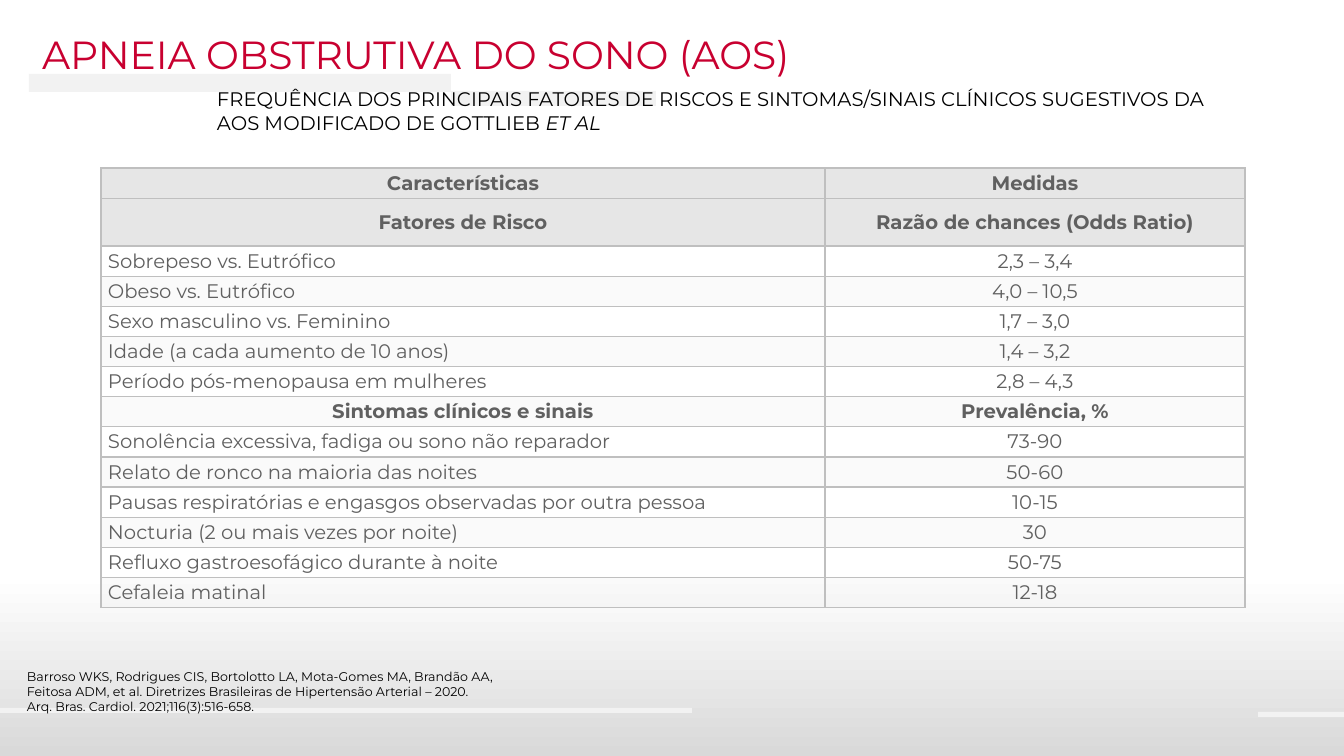
import pptx
import pptx.dml.color
import pptx.enum.shapes
import pptx.enum.text
import pptx.oxml
import pptx.oxml.ns
import pptx.util

W, H = 1344, 756
SCALE = 12192000 / W
FONT = "Montserrat"
COLORS = {
    "red": "C80030", "black": "000000", "text": "606060", "white": "FFFFFF",
    "bar": "F2F2F2", "shade": "D9D9D9", "head": "E6E6E6", "border": "BFBFBF",
}
ALIGN = pptx.enum.text.PP_ALIGN
ANCHOR = pptx.enum.text.MSO_ANCHOR


def px(n):
    return pptx.util.Emu(round(n * SCALE))


def rgb(name):
    return pptx.dml.color.RGBColor.from_string(COLORS[name])


def write(p, text, size=14, color="black", bold=False, italic=False,
          align=ALIGN.LEFT, after=0):
    p.alignment = align
    p.space_before = pptx.util.Pt(0)
    p.space_after = pptx.util.Pt(after)
    r = p.add_run()
    r.text = text
    f = r.font
    f.name, f.size = FONT, pptx.util.Pt(size)
    f.bold, f.italic = bold, italic
    f.color.rgb = rgb(color)


class Deck:
    def __init__(self):
        self.prs = pptx.Presentation()
        self.prs.slide_width, self.prs.slide_height = px(W), px(H)
        self.s = self.prs.slides.add_slide(self.prs.slide_layouts[5])

    def rect(self, x, y, w, h):
        sp = self.s.shapes.add_shape(
            pptx.enum.shapes.MSO_SHAPE.RECTANGLE, px(x), px(y), px(w), px(h))
        sp.shadow.inherit = False
        sp.line.fill.background()
        return sp

    def bar(self, x, y, w, h):
        fill = self.rect(x, y, w, h).fill
        fill.solid()
        fill.fore_color.rgb = rgb("bar")

    def backdrop(self):
        fill = self.rect(0, 0, W, H).fill
        fill.gradient()
        fill.gradient_angle = 270
        stops = ((0.76, "white"), (1, "shade"))
        for stop, (position, color) in zip(fill.gradient_stops, stops):
            stop.position = position
            stop.color.rgb = rgb(color)

    def frame(self, sp):
        tf = sp.text_frame
        tf.word_wrap = True
        tf.auto_size = pptx.enum.text.MSO_AUTO_SIZE.NONE
        tf.vertical_anchor = ANCHOR.TOP
        return tf

    def title(self, text, x, y, w, h):
        sp = self.s.shapes.title
        sp.left, sp.top, sp.width, sp.height = px(x), px(y), px(w), px(h)
        write(self.frame(sp).paragraphs[0], text, size=28, color="red")
        # Bring the title in front of the bars
        sp.element.getparent().append(sp.element)

    def text(self, lines, x, y, w, h, **style):
        tf = self.frame(self.s.shapes.add_textbox(px(x), px(y), px(w), px(h)))
        for i, line in enumerate(lines):
            p = tf.add_paragraph() if i else tf.paragraphs[0]
            write(p, line, **style)
        return tf

    def cell(self, cell, text, fill, alpha=None, **style):
        cell.margin_left = cell.margin_right = px(7)
        cell.margin_top = cell.margin_bottom = 0
        cell.vertical_anchor = ANCHOR.MIDDLE
        write(cell.text_frame.paragraphs[0], text, color="text", after=6, **style)
        tc_pr = cell._tc.get_or_add_tcPr()
        ns = pptx.oxml.ns.nsdecls("a")
        for side in ("lnL", "lnR", "lnT", "lnB"):
            tc_pr.append(pptx.oxml.parse_xml(
                f'<a:{side} {ns} w="12700"><a:solidFill>'
                f'<a:srgbClr val="{COLORS["border"]}"/></a:solidFill></a:{side}>'))
        if not fill:
            cell.fill.background()
            return
        cell.fill.solid()
        cell.fill.fore_color.rgb = rgb(fill)
        if alpha:
            solid = tc_pr.find(pptx.oxml.ns.qn("a:solidFill"))
            solid[0].append(pptx.oxml.parse_xml(
                f'<a:alpha {ns} val="{alpha * 1000}"/>'))

    def table(self, rows, headings, x, y, widths, h, tall_row, tall_height):
        table = self.s.shapes.add_table(
            len(rows), len(widths), px(x), px(y), px(sum(widths)), px(h)).table
        table.first_row = table.horz_banding = False
        for column, width in zip(table.columns, widths):
            column.width = px(width)
        row_height = (h - tall_height) / (len(rows) - 1)
        for i, texts in enumerate(rows):
            table.rows[i].height = px(tall_height if i == tall_row else row_height)
            # Two shaded heading rows, then every other row lightly shaded
            fill = "head" if i < 2 or i % 2 else None
            alpha = 20 if i >= 2 else None
            for j, text in enumerate(texts):
                centred = j > 0 or i in headings
                self.cell(table.cell(i, j), text, fill, alpha, bold=i in headings,
                          align=ALIGN.CENTER if centred else ALIGN.LEFT)


ROWS = [
    ("Características", "Medidas"),
    ("Fatores de Risco", "Razão de chances (Odds Ratio)"),
    ("Sobrepeso vs. Eutrófico", "2,3 – 3,4"),
    ("Obeso vs. Eutrófico", "4,0 – 10,5"),
    ("Sexo masculino vs. Feminino", "1,7 – 3,0"),
    ("Idade (a cada aumento de 10 anos)", "1,4 – 3,2"),
    ("Período pós-menopausa em mulheres", "2,8 – 4,3"),
    ("Sintomas clínicos e sinais", "Prevalência, %"),
    ("Sonolência excessiva, fadiga ou sono não reparador", "73-90"),
    ("Relato de ronco na maioria das noites", "50-60"),
    ("Pausas respiratórias e engasgos observadas por outra pessoa", "10-15"),
    ("Nocturia (2 ou mais vezes por noite)", "30"),
    ("Refluxo gastroesofágico durante à noite", "50-75"),
    ("Cefaleia matinal", "12-18"),
]
REFERENCE = [
    "Barroso WKS, Rodrigues CIS, Bortolotto LA, Mota-Gomes MA, Brandão AA,",
    "Feitosa ADM, et al. Diretrizes Brasileiras de Hipertensão Arterial – 2020.",
    "Arq. Bras. Cardiol. 2021;116(3):516-658.",
]


def main():
    deck = Deck()

    # Backdrop and bars
    deck.backdrop()
    for box in ((29, 74, 422, 18), (451, 91, 205, 15),
                (0, 708, 692, 5), (1258, 712, 86, 5)):
        deck.bar(*box)

    # Title and subtitle
    deck.title("APNEIA OBSTRUTIVA DO SONO (AOS)", 32, 25, 1155, 57)
    tf = deck.text(["FREQUÊNCIA DOS PRINCIPAIS FATORES DE RISCOS E SINTOMAS/SINAIS "
                    "CLÍNICOS SUGESTIVOS DA AOS MODIFICADO DE GOTTLIEB "],
                   207, 82, 1054, 57)
    write(tf.paragraphs[0], "ET AL", italic=True)

    # Table of risk factors and symptoms
    deck.table(ROWS, (0, 1, 7), 101, 168, (724, 420), 440, tall_row=1, tall_height=48)

    # Reference
    deck.text(REFERENCE, 17, 664, 629, 56, size=9)

    deck.prs.save("out.pptx")


if __name__ == "__main__":
    main()
